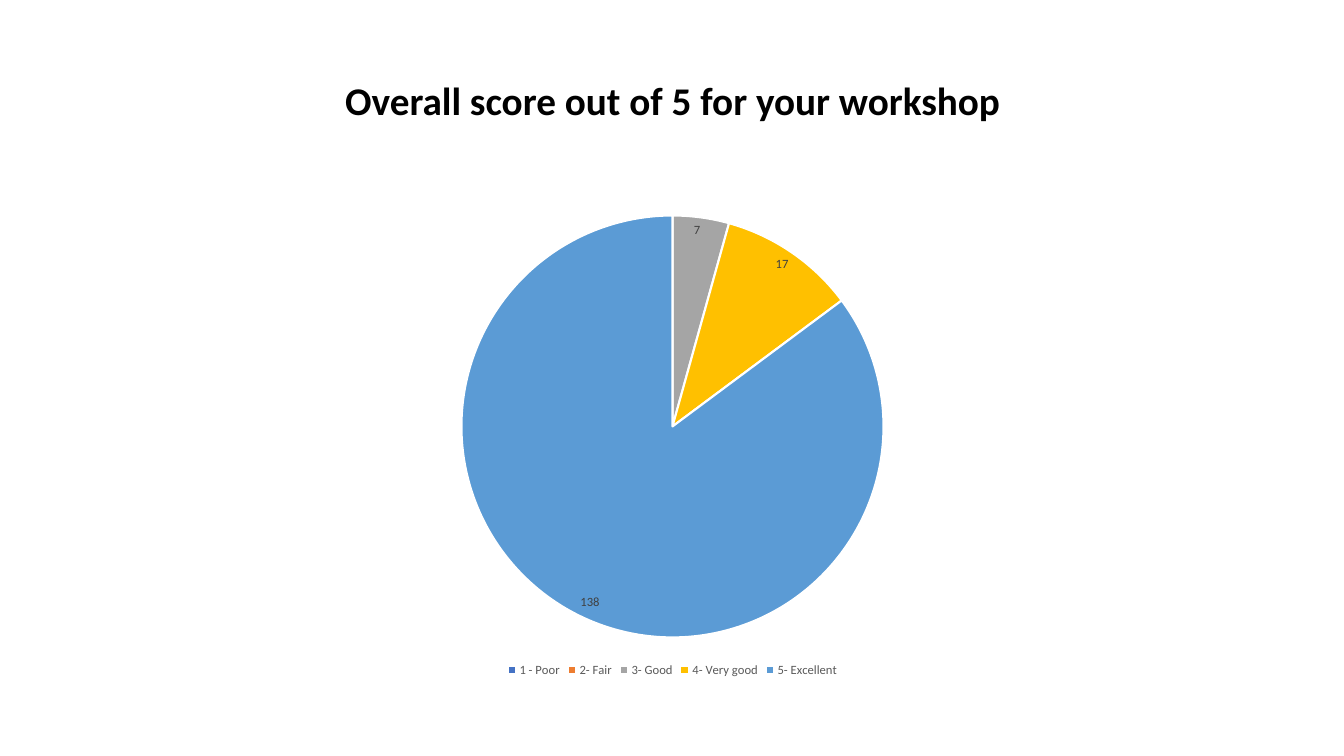
from dataclasses import dataclass

from pptx import Presentation
from pptx import util as u
from pptx.chart.data import CategoryChartData
from pptx.dml.color import RGBColor
from pptx.enum import chart as charts, text

COLOURS = {
    "title": "000000",
    "legend": "595959",
    "label": "404040",
    "border": "FFFFFF",
    "poor": "4472C4",
    "fair": "ED7D31",
    "good": "A5A5A5",
    "very_good": "FFC000",
    "excellent": "5B9BD5",
}
FONT = "Calibri"
LEFT, WIDTH = u.Inches(0.92), u.Inches(11.5)


@dataclass(frozen=True)
class Score:
    name: str
    votes: int
    colour: str


SCORES = [
    Score("1 - Poor", 0, "poor"),
    Score("2- Fair", 0, "fair"),
    Score("3- Good", 7, "good"),
    Score("4- Very good", 17, "very_good"),
    Score("5- Excellent", 138, "excellent"),
]


def apply_format(target, values: dict) -> None:
    for name, value in values.items():
        setattr(target, name, value)


def format_font(font, size: float, colour: str, bold: bool = False) -> None:
    apply_format(font, {"name": FONT, "size": u.Pt(size), "bold": bold})
    font.color.rgb = RGBColor.from_string(COLOURS[colour])


def add_title(slide, wording: str) -> None:
    title = slide.shapes.title
    apply_format(title, {"left": LEFT, "top": u.Inches(0.61),
                         "width": WIDTH, "height": u.Inches(1.24)})
    title.text_frame.text = wording
    apply_format(title.text_frame, {
        "vertical_anchor": text.MSO_ANCHOR.MIDDLE,
        "auto_size": text.MSO_AUTO_SIZE.NONE,
        "word_wrap": True,
        "margin_bottom": u.Inches(0.48),
    })
    paragraph = title.text_frame.paragraphs[0]
    apply_format(paragraph, {"alignment": text.PP_ALIGN.CENTER, "line_spacing": 0.9})
    format_font(paragraph.runs[0].font, 28, "title", bold=True)


def colour_slice(point, score: Score) -> None:
    point.format.fill.solid()
    point.format.fill.fore_color.rgb = RGBColor.from_string(COLOURS[score.colour])
    point.format.line.width = u.Pt(1.5)
    point.format.line.color.rgb = RGBColor.from_string(COLOURS["border"])


def add_score_pie(slide, scores: list[Score]) -> None:
    data = CategoryChartData()
    data.categories = [score.name for score in scores]
    data.add_series("Series 1", [score.votes for score in scores])
    chart = slide.shapes.add_chart(charts.XL_CHART_TYPE.PIE, LEFT, u.Inches(2),
                                   WIDTH, u.Inches(4.76), data).chart
    apply_format(chart, {"has_title": False, "has_legend": True})
    format_font(chart.font, 10, "title")
    apply_format(chart.legend, {"position": charts.XL_LEGEND_POSITION.BOTTOM,
                                "include_in_layout": False})
    format_font(chart.legend.font, 9, "legend")

    plot = chart.plots[0]
    plot.vary_by_categories = True
    series = plot.series[0]
    for index, score in enumerate(scores):
        colour_slice(series.points[index], score)
    labels = series.data_labels
    apply_format(labels, {
        "show_value": True,
        "show_percentage": False,
        "number_format": "0;;",
        "number_format_is_linked": False,
        "position": charts.XL_LABEL_POSITION.INSIDE_END,
    })
    format_font(labels.font, 9, "label")


def main() -> None:
    presentation = Presentation()
    apply_format(presentation, {"slide_width": u.Inches(13.33),
                                "slide_height": u.Inches(7.5)})
    slide = presentation.slides.add_slide(presentation.slide_layouts[5])
    add_title(slide, "Overall score out of 5 for your workshop")
    add_score_pie(slide, SCORES)
    presentation.save("out.pptx")


if __name__ == "__main__":
    main()
